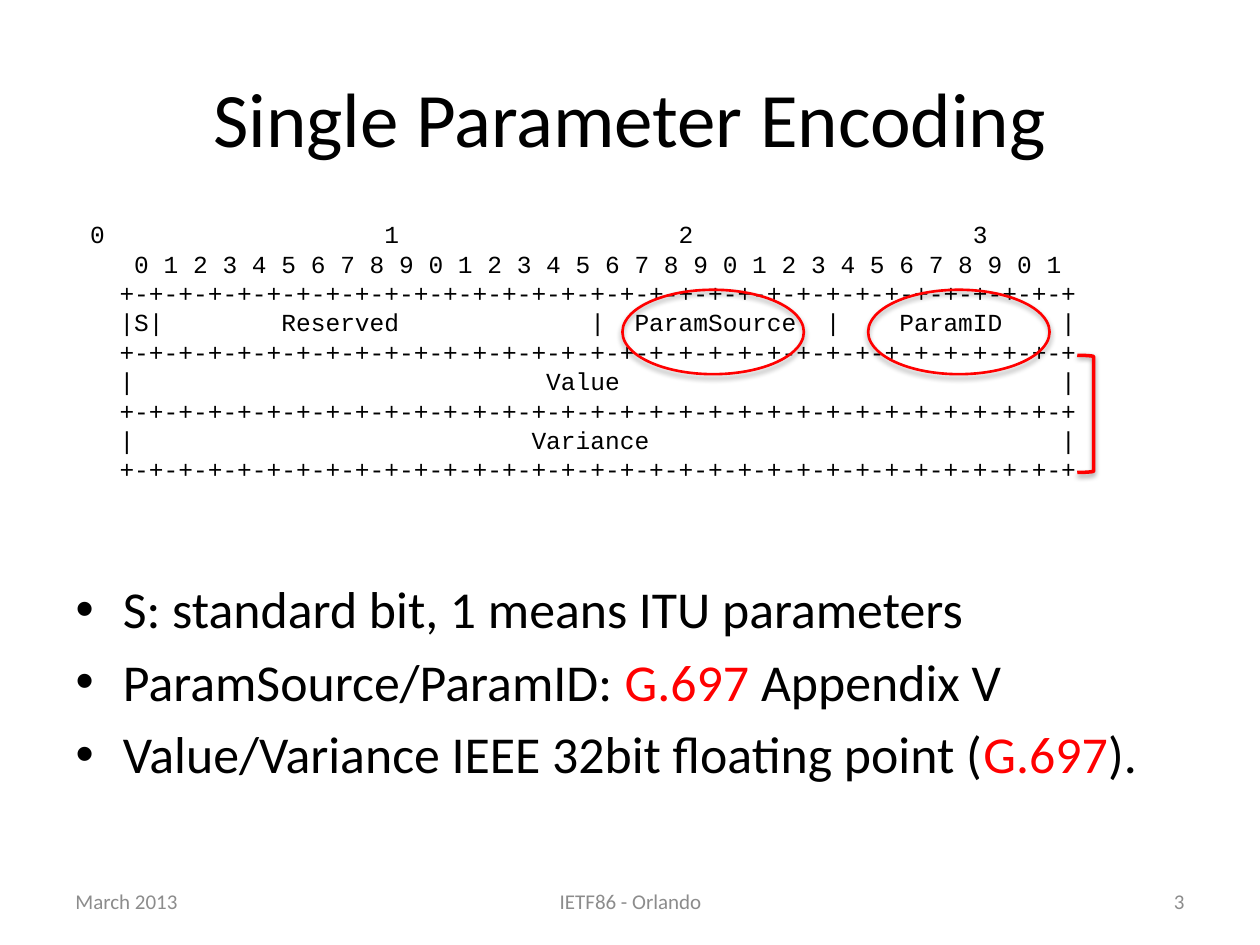
"""Build the slide on the encoding of a single parameter."""
from lxml.etree import SubElement
from pptx import Presentation
from pptx.dml.color import RGBColor
from pptx.enum.shapes import MSO_SHAPE as Shape
from pptx.enum.text import MSO_ANCHOR as Anchor, MSO_AUTO_SIZE as Fit, PP_ALIGN as Align
from pptx.oxml.ns import qn
from pptx.util import Inches, Pt

BLACK = RGBColor(0, 0, 0)
RED = RGBColor(255, 0, 0)
GRAY = RGBColor(0x8C, 0x8C, 0x8C)

TITLE = "Single Parameter Encoding"
BITS = 32
FIELDS = [
    [("S", 1, 0), ("Reserved", 15, 8), ("ParamSource", 8, 2), ("ParamID", 8, 4)],
    [("Value", 32, 28)],
    [("Variance", 32, 27)],
]
POINTS = [
    [("S: standard bit, 1 means ITU parameters", BLACK)],
    [("ParamSource/ParamID: ", BLACK), ("G.697 ", RED), ("Appendix V", BLACK)],
    [("Value/Variance IEEE 32bit floating point (", BLACK), ("G.697", RED), (").", BLACK)],
]
FOOTERS = [
    ("March 2013", 0.5, 2.33, Align.LEFT),
    ("IETF86 - Orlando", 3.42, 3.17, Align.CENTER),
    ("3", 7.17, 2.33, Align.RIGHT),
]
MARKS = [
    (Shape.OVAL, (4.94, 2.3, 1.44, 0.67), 1.5, 1.8, 35),
    (Shape.OVAL, (6.89, 2.3, 1.44, 0.67), 1.5, 1.8, 35),
    (Shape.RIGHT_BRACKET, (8.55, 2.82, 0.13, 0.93), 2, 1.6, 38),
]


def place(shape, box):
    shape.left, shape.top, shape.width, shape.height = map(Inches, box)


def write(frame, lines, size, font="Calibri", align=None):
    for num, line in enumerate(lines):
        para = frame.add_paragraph() if num else frame.paragraphs[0]
        para.alignment = align
        for text, color in line:
            run = para.add_run()
            run.text = text
            run.font.size, run.font.name = Pt(size), font
            run.font.color.rgb = color


def add_text(slide, box, lines, size, **look):
    frame = slide.shapes.add_textbox(*map(Inches, box)).text_frame
    frame.word_wrap = True
    write(frame, lines, size, **look)
    return frame


def draw_bits():
    rule = " " * 3 + "+-" * BITS + "+"
    tens = "".join(f" {num}".ljust(20) for num in range(4)).rstrip()
    ones = " " * 4 + " ".join(str(bit % 10) for bit in range(BITS))
    rows = [tens, ones, rule]
    for fields in FIELDS:
        cells = [(" " * lead + name).ljust(2 * bits - 1) for name, bits, lead in fields]
        rows += [" " * 3 + "|" + "|".join(cells) + "|", rule]
    return rows


def add_mark(slide, kind, box, width, drop, alpha):
    mark = slide.shapes.add_shape(kind, *map(Inches, box))
    mark.fill.background()
    mark.line.color.rgb = RED
    mark.line.width = Pt(width)
    mark.shadow.inherit = False
    effects = mark._element.spPr.find(qn("a:effectLst"))
    shade = SubElement(effects, qn("a:outerShdw"), blurRad=str(Pt(3.1)),
                       dist=str(Pt(drop)), dir="5400000", rotWithShape="0")
    color = SubElement(shade, qn("a:srgbClr"), val="000000")
    SubElement(color, qn("a:alpha"), val=str(alpha * 1000))


def main():
    deck = Presentation()
    deck.slide_width, deck.slide_height = Inches(10), Inches(7.5)
    slide = deck.slides.add_slide(deck.slide_layouts[1])

    title, body = slide.placeholders
    place(title, (0.5, 0.3, 9, 1.25))
    title.text_frame.vertical_anchor = Anchor.MIDDLE
    write(title.text_frame, [[(TITLE, BLACK)]], 44, align=Align.CENTER)

    place(body, (0.5, 4.53, 9, 2.17))
    body.text_frame.auto_size = Fit.NONE
    write(body.text_frame, POINTS, 29.6)

    for text, left, width, align in FOOTERS:
        frame = add_text(slide, (left, 6.95, width, 0.4), [[(text, GRAY)]], 12, align=align)
        frame.vertical_anchor = Anchor.MIDDLE

    rows = [[(row, BLACK)] for row in draw_bits()]
    frame = add_text(slide, (0.5, 1.69, 8.98, 2.22), rows, 14, font="Courier New")
    frame.auto_size = Fit.SHAPE_TO_FIT_TEXT

    for mark in MARKS:
        add_mark(slide, *mark)
    deck.save("out.pptx")


if __name__ == "__main__":
    main()
